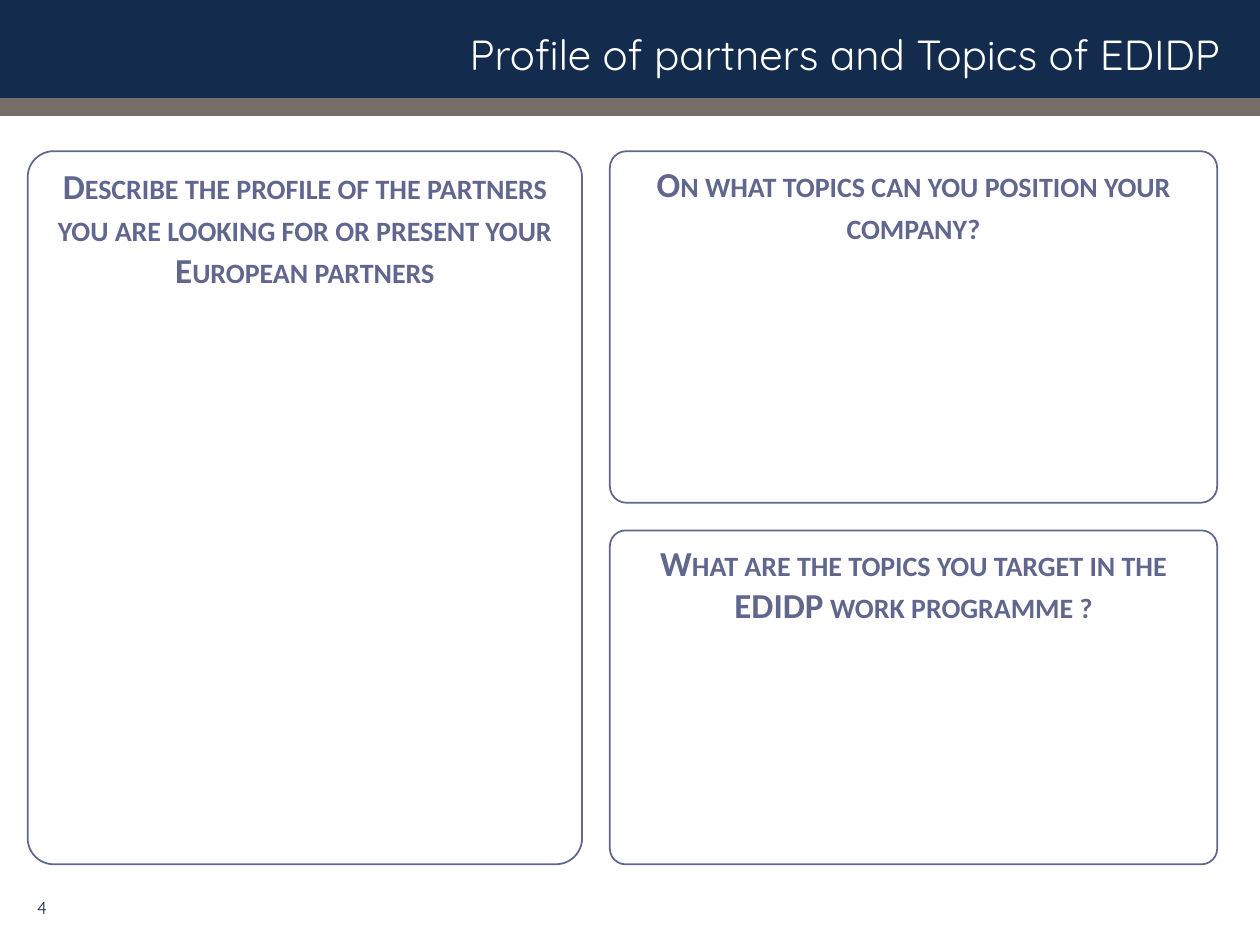
from pptx import Presentation
from pptx.dml.color import RGBColor
from pptx.enum.shapes import MSO_SHAPE
from pptx.enum.text import MSO_ANCHOR, MSO_AUTO_SIZE, PP_ALIGN
from pptx.util import Inches, Pt

NAVY = RGBColor(0x13, 0x2C, 0x4D)
TAUPE = RGBColor(0x76, 0x6C, 0x68)
SLATE = RGBColor(0x60, 0x66, 0x8D)
WHITE = RGBColor(0xFF, 0xFF, 0xFF)

TITLE = "Profile of partners and Topics of EDIDP"
PAGE = "4"
BANDS = [(0, 0.9, NAVY), (0.78, 0.14, TAUPE)]
PANELS = [
    ("Describe the profile of the partners you are looking for or present your European partners", 0, 0, 2),
    ("On what topics can you position your company?", 1, 0, 1),
    ("What are the topics you target in the EDIDP work programme ?", 1, 1, 1),
]
WIDE, HIGH = 10, 7.5
LEFT, TOP, GAP = 0.22, 1.2, 0.22
COLS = [4.4, 4.82]
ROWS = [2.79, 2.65]


def span(start, sizes, first, count=1):
    pos = start + sum(sizes[:first]) + GAP * first
    return pos, sum(sizes[first:first + count]) + GAP * (count - 1)


def write(shape, text, size, color, font="Quicksand", align=PP_ALIGN.RIGHT,
          anchor=MSO_ANCHOR.MIDDLE, bold=False, small=False):
    frame = shape.text_frame
    frame.word_wrap = True
    frame.auto_size = MSO_AUTO_SIZE.NONE
    frame.vertical_anchor = anchor
    para = frame.paragraphs[0]
    para.alignment = align
    run = para.add_run()
    run.text = text
    run.font.name = font
    run.font.size = Pt(size)
    run.font.bold = bold
    run.font.color.rgb = color
    if small:
        run._r.get_or_add_rPr().set("cap", "small")


def draw(slide, kind, box, fill=None, line=None):
    shape = slide.shapes.add_shape(kind, *map(Inches, box))
    shape.shadow.inherit = False
    for part, color in ((shape.fill, fill), (shape.line.fill, line)):
        if color is None:
            part.background()
        else:
            part.solid()
            part.fore_color.rgb = color
    return shape


def main():
    deck = Presentation()
    deck.slide_width, deck.slide_height = Inches(WIDE), Inches(HIGH)
    slide = deck.slides.add_slide(deck.slide_layouts[5])

    for top, high, color in BANDS:
        draw(slide, MSO_SHAPE.RECTANGLE, (0, top, WIDE, high), fill=color)

    title = slide.shapes.title
    title.left, title.top, title.width, title.height = map(Inches, (0.15, 0.14, 9.63, 0.58))
    slide.shapes._spTree.append(title._element)
    write(title, TITLE, 24, WHITE)

    page = slide.shapes.add_textbox(*map(Inches, (-0.04, 7, 0.51, 0.4)))
    write(page, PAGE, 10, NAVY)

    for text, col, row, rows in PANELS:
        left, wide = span(LEFT, COLS, col)
        top, high = span(TOP, ROWS, row, rows)
        panel = draw(slide, MSO_SHAPE.ROUNDED_RECTANGLE, (left, top, wide, high),
                     fill=WHITE if row else None, line=SLATE)
        panel.adjustments[0] = 0.047
        panel.line.width = Pt(1)
        write(panel, text, 20, SLATE, font="Calibri", align=PP_ALIGN.CENTER,
              anchor=MSO_ANCHOR.TOP, bold=True, small=True)

    deck.save("out.pptx")


if __name__ == "__main__":
    main()
